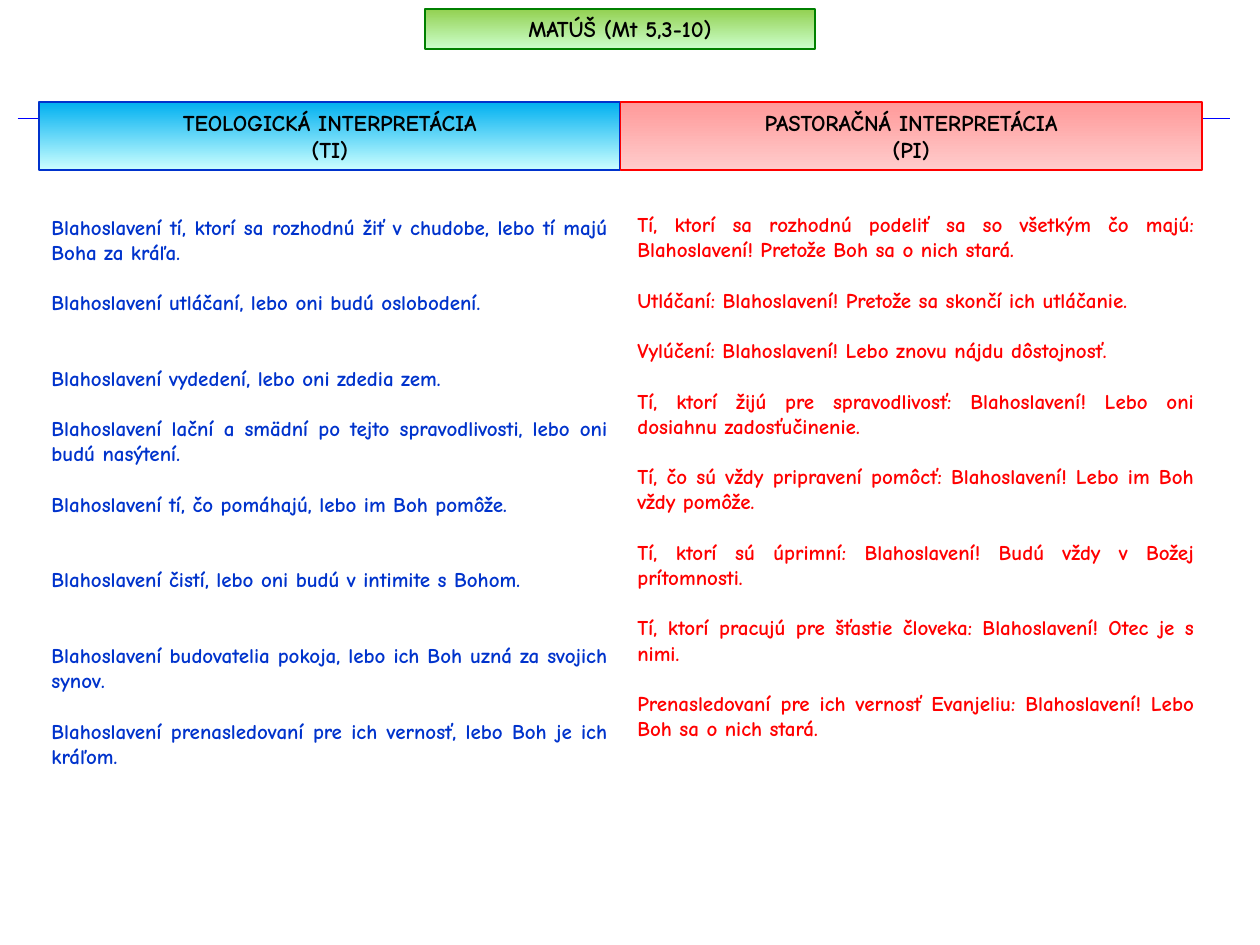
from pptx import Presentation
from pptx.dml.color import RGBColor
from pptx.enum.shapes import MSO_CONNECTOR as Connector, MSO_SHAPE as Shape
from pptx.enum.text import MSO_ANCHOR as Anchor, MSO_AUTO_SIZE as AutoSize, PP_ALIGN as Align
from pptx.oxml.ns import qn
from pptx.util import Pt
from lxml.etree import SubElement

FONT = "Comic Neue"
BLUE, RED, GREEN = "0033CC", "FF0000", "008000"
LINE_PITCH = 14.4
LEFT, TOP, COLUMN = 22.3, 58.3, 332.2

THEOLOGICAL = [
    (0, "Blahoslavení tí, ktorí sa rozhodnú žiť v chudobe, lebo tí majú Boha za kráľa."),
    (1, "Blahoslavení utláčaní, lebo oni budú oslobodení."),
    (2, "Blahoslavení vydedení, lebo oni zdedia zem."),
    (1, "Blahoslavení lační a smädní po tejto spravodlivosti, lebo oni budú nasýtení."),
    (1, "Blahoslavení tí, čo pomáhajú, lebo im Boh pomôže."),
    (2, "Blahoslavení čistí, lebo oni budú v intimite s Bohom."),
    (2, "Blahoslavení budovatelia pokoja, lebo ich Boh uzná za svojich synov."),
    (1, "Blahoslavení prenasledovaní pre ich vernosť, lebo Boh je ich kráľom."),
]
PASTORAL = [
    (0, "Tí, ktorí sa rozhodnú podeliť sa so všetkým čo majú: Blahoslavení! Pretože Boh sa o nich stará."),
    (1, "Utláčaní: Blahoslavení! Pretože sa skončí ich utláčanie."),
    (1, "Vylúčení: Blahoslavení! Lebo znovu nájdu dôstojnosť."),
    (1, "Tí, ktorí žijú pre spravodlivosť: Blahoslavení! Lebo oni dosiahnu zadosťučinenie."),
    (1, "Tí, čo sú vždy pripravení pomôcť: Blahoslavení! Lebo im Boh vždy pomôže."),
    (1, "Tí, ktorí sú úprimní: Blahoslavení! Budú vždy v Božej prítomnosti."),
    (1, "Tí, ktorí pracujú pre šťastie človeka: Blahoslavení! Otec je s nimi."),
    (1, "Prenasledovaní pre ich vernosť Evanjeliu: Blahoslavení! Lebo Boh sa o nich stará."),
]


def color(code):
    return RGBColor.from_string(code)


def write(box, lines, size=12, ink="000000", align=Align.CENTER, anchor=Anchor.TOP):
    frame = box.text_frame
    frame.word_wrap = True
    frame.auto_size = AutoSize.SHAPE_TO_FIT_TEXT
    frame.vertical_anchor = anchor
    for index, (gap, text) in enumerate(lines):
        para = frame.add_paragraph() if index else frame.paragraphs[0]
        para.alignment = align
        para.space_before = Pt(gap * LINE_PITCH)
        span = para.add_run()
        span.text = text
        span.font.name = FONT
        span.font.size = Pt(size)
        span.font.bold = True
        span.font.color.rgb = color(ink)


class Painter:
    def __init__(self, page):
        self.page = page

    def rule(self, left, right, y, ink, weight):
        line = self.page.shapes.add_connector(
            Connector.STRAIGHT, Pt(left), Pt(y), Pt(right), Pt(y))
        line.line.color.rgb = color(ink)
        line.line.width = Pt(weight)
        SubElement(line._element.spPr, qn("a:effectLst"))

    def column(self, left, top, width, height, lines, ink):
        box = self.page.shapes.add_textbox(Pt(left), Pt(top), Pt(width), Pt(height))
        write(box, lines, ink=ink, align=Align.JUSTIFY)

    def banner(self, left, top, width, height, lines, shades, border):
        box = self.page.shapes.add_shape(
            Shape.RECTANGLE, Pt(left), Pt(top), Pt(width), Pt(height))
        box.shadow.inherit = False
        box.fill.gradient()
        box.fill.gradient_angle = 270
        for stop, shade, position in zip(box.fill.gradient_stops, shades, (0, 1)):
            stop.color.rgb = color(shade)
            stop.position = position
        box.line.color.rgb = color(border)
        box.line.width = Pt(1)
        write(box, [(0, text) for text in lines], size=12.9, anchor=Anchor.MIDDLE)


def main():
    deck = Presentation()
    deck.slide_width, deck.slide_height = Pt(720), Pt(540)
    painter = Painter(deck.slides.add_slide(deck.slide_layouts[6]))

    painter.rule(10.1, 702.7, 67.7, "0000FF", 0.5)
    painter.column(357.1, 117.4, 332.6, 326.9, PASTORAL, RED)
    painter.column(LEFT, 118.8, COLUMN, 326.9, THEOLOGICAL, BLUE)
    painter.banner(LEFT, TOP, COLUMN, 38.9, ["TEOLOGICKÁ INTERPRETÁCIA", "(TI)"],
                   ["00B0F0", "CCFFFF"], BLUE)
    painter.banner(LEFT + COLUMN, TOP, COLUMN, 38.9, ["PASTORAČNÁ INTERPRETÁCIA", "(PI)"],
                   ["FF9999", "FFCCCC"], RED)
    painter.banner(242.7, 5, 223.2, 23, ["MATÚŠ (Mt 5,3-10)"], ["92D050", "CCFFCC"], GREEN)
    deck.save("out.pptx")


if __name__ == "__main__":
    main()
